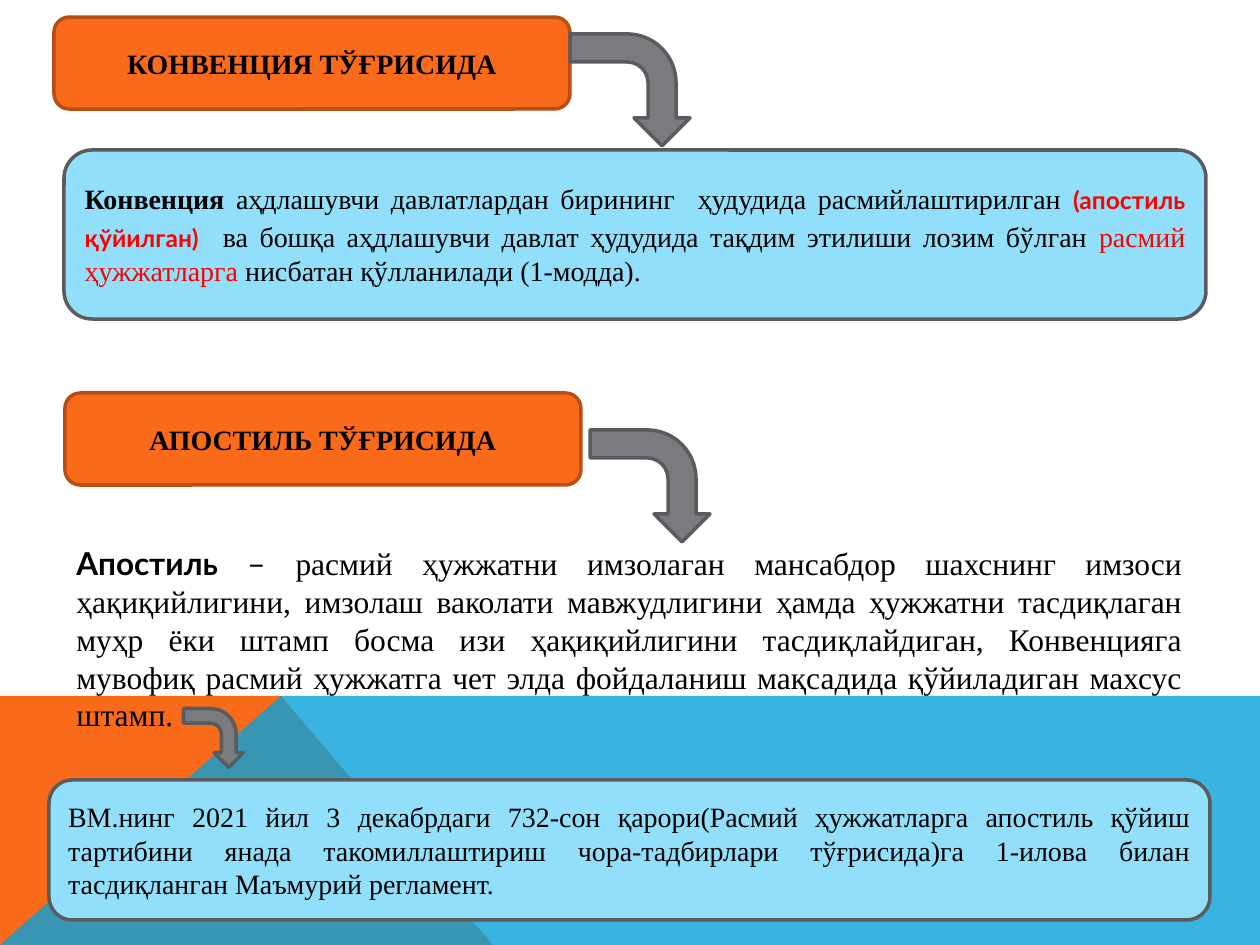
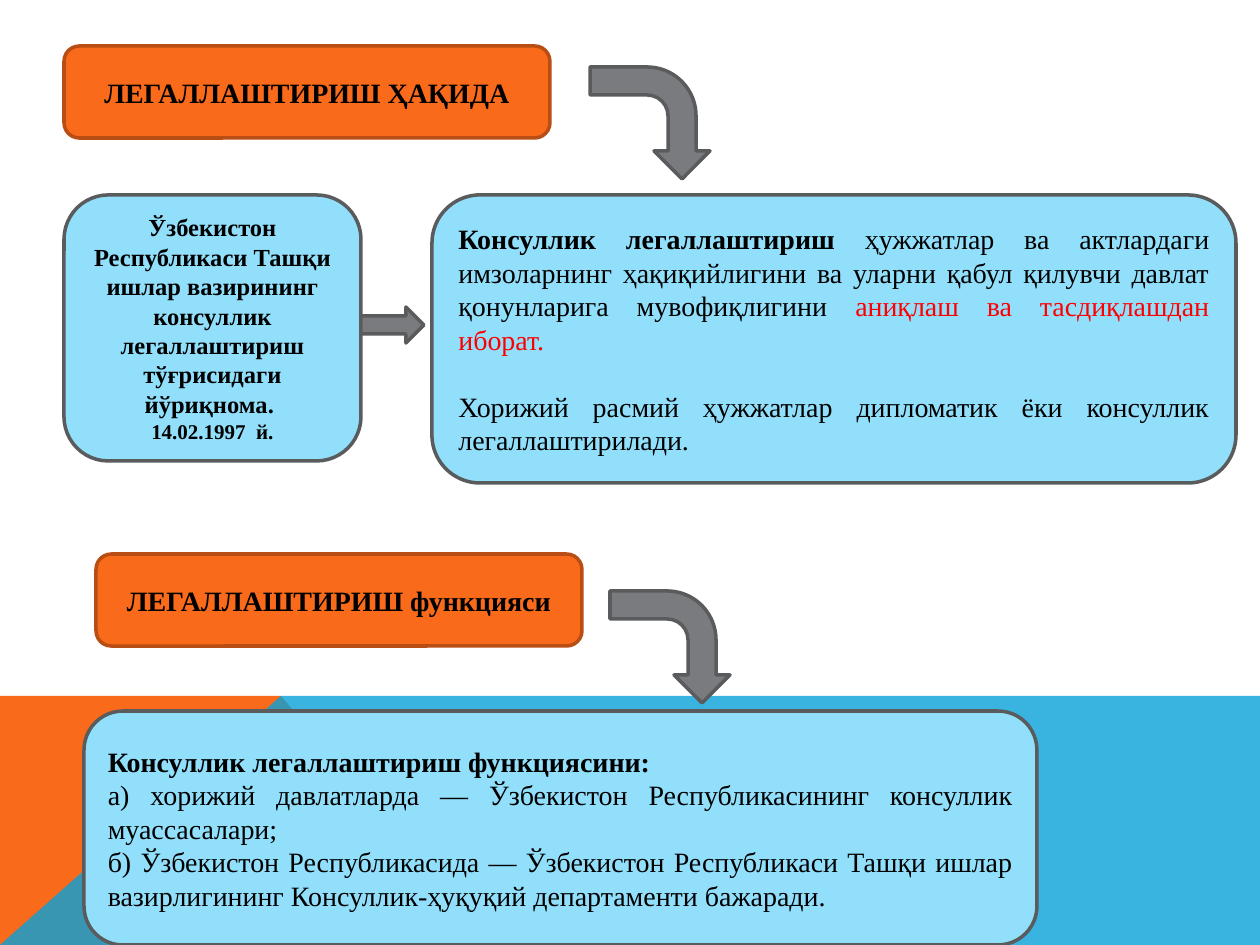
from lxml import etree
from pptx import Presentation
from pptx.dml.color import RGBColor
from pptx.enum.shapes import MSO_SHAPE
from pptx.enum.text import MSO_ANCHOR, MSO_AUTO_SIZE, PP_ALIGN
from pptx.oxml.ns import qn
from pptx.util import Pt

SCALE = 914400 / 126
SLIDE_WIDTH, SLIDE_HEIGHT = 1260, 945
BAND_TOP = 696

ORANGE = RGBColor(0xF9, 0x6A, 0x1B)
DARK_ORANGE = RGBColor(0xB8, 0x4E, 0x14)
BLUE = RGBColor(0x08, 0xA1, 0xD9)
LIGHT_BLUE = RGBColor(0x91, 0xDF, 0xFB)
GREY = RGBColor(0x79, 0x7B, 0x7E)
DARK_GREY = RGBColor(0x5A, 0x5B, 0x5D)
BLACK = RGBColor(0, 0, 0)
RED = RGBColor(0xFF, 0, 0)

SERIF, SANS = "Times New Roman", "Lato"


def emu(pixels):
    """Turn px into EMU."""
    return round(pixels * SCALE)


def run(text, size=16, bold=False, color=BLACK, font=SERIF):
    """Describe one run of text."""
    return text, size, bold, color, font


def write_paragraphs(frame, paragraphs, alignment, gaps=None):
    """Fill a text frame run by run; gaps maps a paragraph index to points before it."""
    frame.word_wrap = True
    for index, runs in enumerate(paragraphs):
        paragraph = frame.paragraphs[0] if index == 0 else frame.add_paragraph()
        paragraph.alignment = alignment
        if gaps and index in gaps:
            paragraph.space_before = Pt(gaps[index])
        for text, size, bold, color, font in runs:
            text_run = paragraph.add_run()
            text_run.text = text
            text_run.font.size = Pt(size)
            text_run.font.bold = bold
            text_run.font.name = font
            text_run.font.color.rgb = color


def add_filled_shape(slide, preset, box, fill, line):
    """Add a preset shape with a flat fill and a 2 pt outline."""
    shape = slide.shapes.add_shape(preset, *map(emu, box))
    shape.shadow.inherit = False
    shape.fill.solid()
    shape.fill.fore_color.rgb = fill
    shape.line.color.rgb = line
    shape.line.width = Pt(2)
    return shape


def add_heading(slide, left, top, width, text):
    """Add an orange heading box."""
    shape = add_filled_shape(slide, MSO_SHAPE.ROUNDED_RECTANGLE,
                             (left, top, width, 92), ORANGE, DARK_ORANGE)
    shape.text_frame.vertical_anchor = MSO_ANCHOR.MIDDLE
    write_paragraphs(shape.text_frame, [[run(text, bold=True)]], PP_ALIGN.CENTER)


def add_panel(slide, box, paragraphs, alignment=PP_ALIGN.JUSTIFY, gaps=None):
    """Add a light blue panel of text."""
    shape = add_filled_shape(slide, MSO_SHAPE.ROUNDED_RECTANGLE,
                             box, LIGHT_BLUE, DARK_GREY)
    shape.text_frame.vertical_anchor = MSO_ANCHOR.MIDDLE
    write_paragraphs(shape.text_frame, paragraphs, alignment, gaps)


def add_bent_arrow(slide, left, top, width=112, height=120):
    """Add a grey arrow that turns downwards."""
    arrow = add_filled_shape(slide, MSO_SHAPE.BENT_ARROW,
                             (left, top, width, height), GREY, DARK_GREY)
    arrow.rotation = 90


def add_band(slide, points, color, opacity=100):
    """Add one borderless polygon of the bottom band."""
    builder = slide.shapes.build_freeform(*points[0], scale=SCALE)
    builder.add_line_segments(points[1:], close=True)
    band = builder.convert_to_shape()
    band.shadow.inherit = False
    band.fill.solid()
    band.fill.fore_color.rgb = color
    band.line.fill.background()
    if opacity < 100:
        color_element = band.fill._xPr.find(qn("a:solidFill"))[0]
        alpha = etree.SubElement(color_element, qn("a:alpha"))
        alpha.set("val", str(opacity * 1000))


def add_base_slide(presentation):
    """Add a blank slide with the shared bottom band."""
    slide = presentation.slides.add_slide(presentation.slide_layouts[6])
    corner, peak = (0, SLIDE_HEIGHT), (281, BAND_TOP)
    add_band(slide, [corner, (0, BAND_TOP), peak, (493, SLIDE_HEIGHT)], ORANGE)
    add_band(slide, [corner, peak, (SLIDE_WIDTH, BAND_TOP),
                     (SLIDE_WIDTH, SLIDE_HEIGHT)], BLUE, 80)
    return slide


def build_apostille_slide(presentation):
    """Build the slide on the convention and the apostille."""
    slide = add_base_slide(presentation)
    add_panel(slide, (64, 150, 1142, 169), [[
        run("Конвенция", bold=True),
        run(" аҳдлашувчи давлатлардан бирининг  ҳудудида расмийлаштирилган "),
        run("(апостиль қўйилган)", 14, True, RED, SANS),
        run(" ", 18, color=RED, font=SANS),
        run(" ва бошқа аҳдлашувчи давлат ҳудудида тақдим этилиши лозим бўлган "),
        run("расмий ҳужжатларга ", color=RED),
        run("нисбатан қўлланилади (1-модда). "),
    ]])

    definition = slide.shapes.add_textbox(*map(emu, (64, 538, 1131, 204)))
    write_paragraphs(definition.text_frame, [[
        run("Апостиль ", 18, True, font=SANS),
        run("– ", 18, font=SANS),
        run("расмий ҳужжатни имзолаган мансабдор шахснинг имзоси "
            "ҳақиқийлигини, имзолаш ваколати мавжудлигини ҳамда ҳужжатни "
            "тасдиқлаган муҳр ёки штамп босма изи ҳақиқийлигини "
            "тасдиқлайдиган, Конвенцияга мувофиқ расмий ҳужжатга чет элда "
            "фойдаланиш мақсадида қўйиладиган махсус штамп.", 18),
    ]], PP_ALIGN.JUSTIFY)
    definition.text_frame.auto_size = MSO_AUTO_SIZE.SHAPE_TO_FIT_TEXT

    add_heading(slide, 54, 17, 516, "КОНВЕНЦИЯ ТЎҒРИСИДА")
    add_heading(slide, 65, 393, 516, "АПОСТИЛЬ ТЎҒРИСИДА")
    add_bent_arrow(slide, 574, 30)
    add_bent_arrow(slide, 594, 426)
    add_panel(slide, (49, 780, 1161, 140), [[
        run("ВМ.нинг 2021 йил 3 декабрдаги 732-сон қарори(Расмий ҳужжатларга "
            "апостиль қўйиш тартибини янада такомиллаштириш чора-тадбирлари "
            "тўғрисида)га 1-илова билан тасдиқланган Маъмурий регламент."),
    ]])
    add_bent_arrow(slide, 184, 708, 59, 60)


def build_legalization_slide(presentation):
    """Build the slide on consular legalization."""
    slide = add_base_slide(presentation)
    add_panel(slide, (432, 195, 804, 288), [
        [run("Консуллик легаллаштириш ", bold=True),
         run("ҳужжатлар ва актлардаги имзоларнинг ҳақиқийлигини ва уларни "
             "қабул қилувчи давлат қонунларига мувофиқлигини "),
         run("аниқлаш ва тасдиқлашдан иборат.", color=RED)],
        [run("Хорижий расмий ҳужжатлар дипломатик ёки консуллик "
             "легаллаштирилади.")],
    ], gaps={1: 19})
    add_heading(slide, 64, 46, 486, "ЛЕГАЛЛАШТИРИШ ҲАҚИДА")
    add_bent_arrow(slide, 594, 63)
    add_panel(slide, (64, 195, 297, 266), [
        [run("Ўзбекистон Республикаси Ташқи ишлар вазирининг консуллик "
             "легаллаштириш тўғрисидаги йўриқнома. ", 14, True)],
        [run("14.02.1997  й.", 12, True)],
    ], PP_ALIGN.CENTER)
    add_filled_shape(slide, MSO_SHAPE.RIGHT_ARROW, (361, 307, 63, 36),
                     GREY, DARK_GREY)
    add_panel(slide, (84, 711, 953, 234), [
        [run("Консуллик легаллаштириш функциясини:", bold=True)],
        [run("а) хорижий давлатларда — Ўзбекистон Республикасининг консуллик "
             "муассасалари;")],
        [run("б) Ўзбекистон Республикасида — Ўзбекистон Республикаси Ташқи "
             "ишлар вазирлигининг Консуллик-ҳуқуқий департаменти бажаради.")],
    ])
    add_heading(slide, 96, 554, 486, "ЛЕГАЛЛАШТИРИШ функцияси")
    add_bent_arrow(slide, 614, 587)


def main():
    """Build and save the presentation."""
    presentation = Presentation()
    presentation.slide_width = emu(SLIDE_WIDTH)
    presentation.slide_height = emu(SLIDE_HEIGHT)
    build_apostille_slide(presentation)
    build_legalization_slide(presentation)
    presentation.save("out.pptx")


if __name__ == "__main__":
    main()
